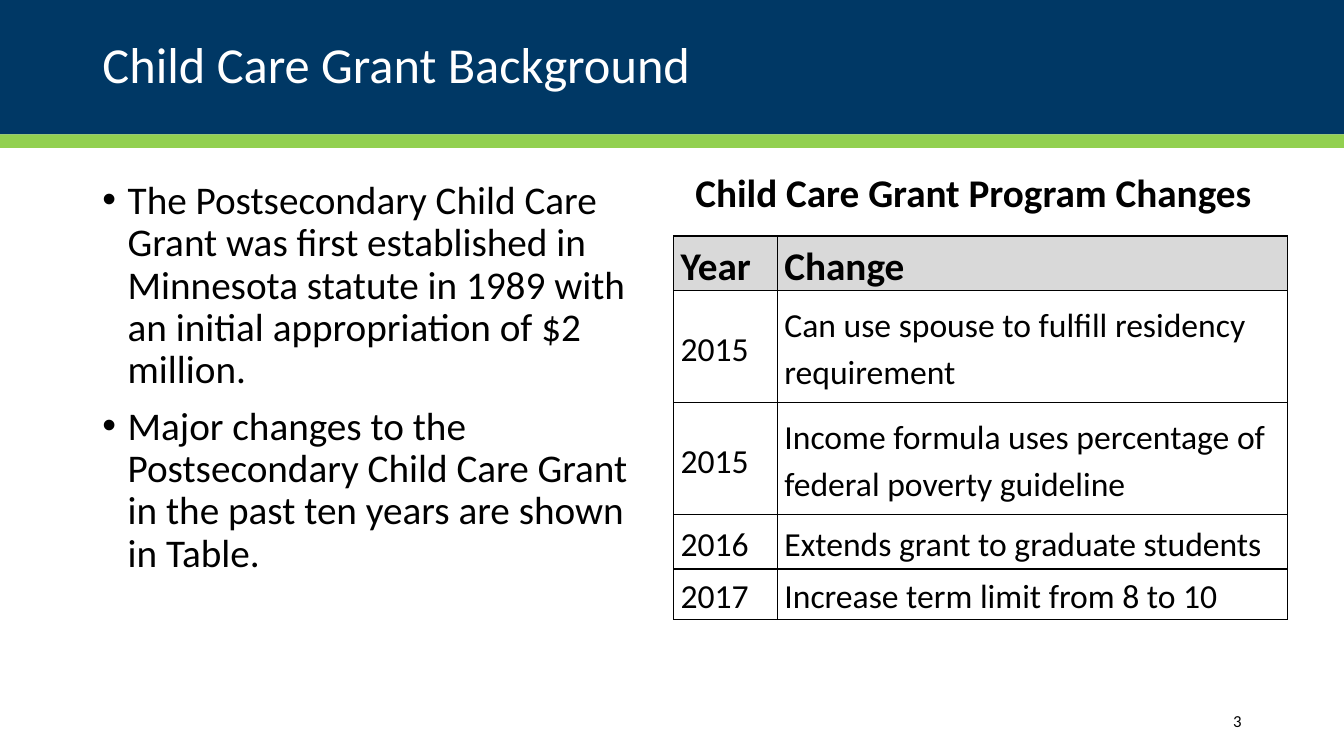
from dataclasses import dataclass

from lxml.etree import SubElement
from pptx import Presentation
from pptx.dml.color import RGBColor
from pptx.enum.shapes import MSO_SHAPE as Shape
from pptx.enum.text import MSO_ANCHOR as Anchor, MSO_AUTO_SIZE as AutoSize, PP_ALIGN as Align
from pptx.oxml.ns import qn
from pptx.util import Inches, Pt


@dataclass(frozen=True)
class Theme:
    font: str = "Calibri"
    navy: str = "003865"
    green: str = "92D050"
    white: str = "FFFFFF"
    black: str = "000000"
    grey: str = "D9D9D9"
    title_size: int = 36
    body_size: int = 28
    cell_size: int = 24
    number_size: int = 12


THEME = Theme()
COLUMNS, ROWS = 160, 90
SLIDE_WIDTH, SLIDE_HEIGHT = Inches(13.33), Inches(7.5)

BULLETS = [
    "The Postsecondary Child Care Grant was first established in Minnesota "
    "statute in 1989 with an initial appropriation of $2 million.",
    "Major changes to the Postsecondary Child Care Grant in the past ten years "
    "are shown in Table.",
]
CHANGES = [
    ("Year", "Change"),
    ("2015", "Can use spouse to fulfill residency requirement"),
    ("2015", "Income formula uses percentage of federal poverty guideline"),
    ("2016", "Extends grant to graduate students"),
    ("2017", "Increase term limit from 8 to 10"),
]
CHANGE_COLUMNS = (12.35, 60.7)
CHANGE_ROWS = (6.5, 13.35, 13.35, 6.45, 6)


def across(columns):
    return round(SLIDE_WIDTH * columns / COLUMNS)


def down(rows):
    return round(SLIDE_HEIGHT * rows / ROWS)


def area(column, row, columns, rows):
    return across(column), down(row), across(columns), down(rows)


def place(shape, *cells):
    shape.left, shape.top, shape.width, shape.height = area(*cells)


def paint(target, color):
    target.fill.solid()
    target.fill.fore_color.rgb = RGBColor.from_string(color)


def write(para, text, size, color=THEME.black, bold=False):
    span = para.add_run()
    span.text = text
    span.font.name = THEME.font
    span.font.size = Pt(size)
    span.font.bold = bold
    span.font.color.rgb = RGBColor.from_string(color)


def add_band(page, row, rows, color):
    """Add a full-width band behind the title."""
    band = page.shapes.add_shape(Shape.RECTANGLE, *area(0, row, COLUMNS, rows))
    band.shadow.inherit = False
    band.line.fill.background()
    paint(band, color)
    page.shapes.title.element.addprevious(band.element)


def fill_title(page, text):
    title = page.shapes.title
    place(title, 11, 2, 138, 12)
    frame = title.text_frame
    frame.vertical_anchor = Anchor.MIDDLE
    frame.auto_size = AutoSize.NONE
    para = frame.paragraphs[0]
    para.alignment = Align.LEFT
    para.line_spacing = 0.9
    write(para, text, THEME.title_size, THEME.white)


def fill_bullets(page, items):
    body = page.placeholders[1]
    place(body, 11, 20.9, 68, 60.1)
    paint(body, THEME.white)
    frame = body.text_frame
    frame.auto_size = AutoSize.NONE
    for index, item in enumerate(items):
        para = frame.add_paragraph() if index else frame.paragraphs[0]
        para.line_spacing = 0.9
        para.space_before = Pt(10)
        properties = para._p.get_or_add_pPr()
        properties.set("marL", str(Inches(0.25)))
        properties.set("indent", str(-Inches(0.25)))
        SubElement(properties, qn("a:buFont"), typeface="Arial")
        SubElement(properties, qn("a:buChar"), char="•")
        write(para, item, THEME.body_size)


def add_label(page, cells, text, size, bold=False, align=Align.LEFT, anchor=Anchor.TOP):
    frame = page.shapes.add_textbox(*area(*cells)).text_frame
    frame.word_wrap = True
    frame.vertical_anchor = anchor
    frame.paragraphs[0].alignment = align
    write(frame.paragraphs[0], text, size, bold=bold)


def outline(cell):
    """Draw a thin border on all four sides, ahead of the cell's fill."""
    properties = cell._tc.get_or_add_tcPr()
    for index, side in enumerate(("lnL", "lnR", "lnT", "lnB")):
        line = SubElement(properties, qn(f"a:{side}"), w=str(Pt(1)))
        fill = SubElement(line, qn("a:solidFill"))
        SubElement(fill, qn("a:srgbClr"), val=THEME.black)
        properties.insert(index, line)


def fill_cell(cell, text, header):
    cell.margin_left = cell.margin_right = Inches(0.07)
    cell.margin_top = cell.margin_bottom = 0
    cell.vertical_anchor = Anchor.BOTTOM if header else Anchor.MIDDLE
    if header:
        paint(cell, THEME.grey)
    else:
        cell.fill.background()
    outline(cell)
    para = cell.text_frame.paragraphs[0]
    para.line_spacing = 1.15
    write(para, text, THEME.body_size if header else THEME.cell_size, bold=header)


def add_changes_table(page):
    cells = 80.2, 28.1, sum(CHANGE_COLUMNS), sum(CHANGE_ROWS)
    table = page.shapes.add_table(len(CHANGES), len(CHANGE_COLUMNS), *area(*cells)).table
    table.horz_banding = False
    for column, width in zip(table.columns, CHANGE_COLUMNS):
        column.width = across(width)
    for index, (row, height) in enumerate(zip(table.rows, CHANGE_ROWS)):
        row.height = down(height)
        for cell, text in zip(row.cells, CHANGES[index]):
            fill_cell(cell, text, header=index == 0)


def main():
    deck = Presentation()
    deck.slide_width, deck.slide_height = SLIDE_WIDTH, SLIDE_HEIGHT
    page = deck.slides.add_slide(deck.slide_layouts.get_by_name("Title and Content"))
    add_band(page, 0, 16, THEME.navy)
    add_band(page, 16, 1.6, THEME.green)
    fill_title(page, "Child Care Grant Background")
    fill_bullets(page, BULLETS)
    add_label(page, (113, 83.4, 36, 4.8), "3", THEME.number_size,
              align=Align.RIGHT, anchor=Anchor.MIDDLE)
    add_changes_table(page)
    add_label(page, (81.6, 19.4, 73, 6.9), "Child Care Grant Program Changes",
              THEME.body_size, bold=True)
    deck.save("out.pptx")


if __name__ == "__main__":
    main()
